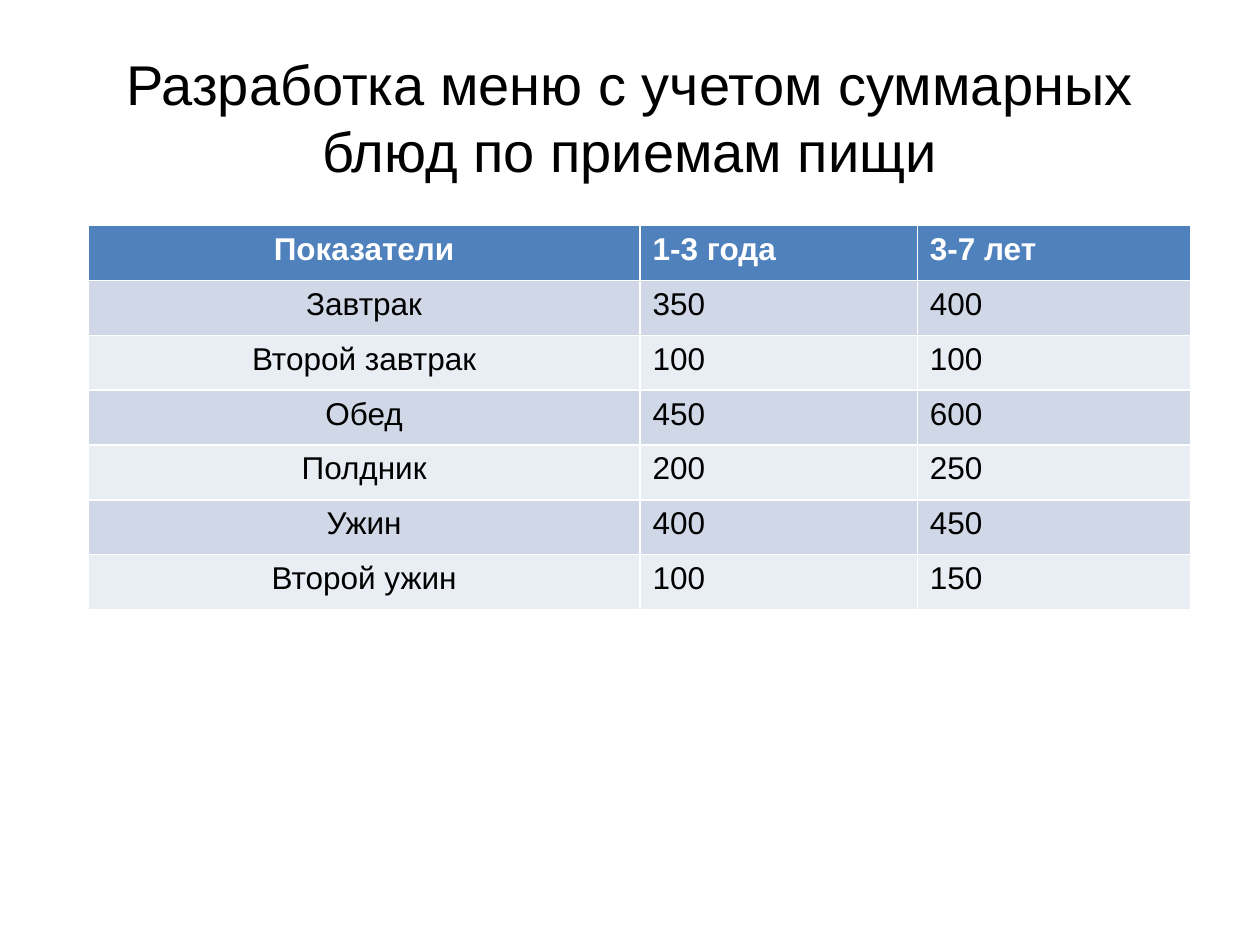
from pptx import Presentation
from pptx.dml.color import RGBColor
from pptx.enum.text import MSO_ANCHOR, PP_ALIGN
from pptx.util import Inches, Pt

CENTER, LEFT = PP_ALIGN.CENTER, PP_ALIGN.LEFT
MIDDLE = MSO_ANCHOR.MIDDLE
TITLE_ONLY = 5
FONT = "Arial"
BLACK, WHITE = "000000", "FFFFFF"
HEADER_FILL = "4F81BD"
BAND_FILLS = ("E9EDF4", "D0D8E8")
TITLE_BOX = (0.5, 0.3, 9, 1.25)
TABLE_BOX = (0.7, 1.79, 8.75, 3.05)
COLUMN_WIDTHS = (4.38, 2.2, 2.17)
TITLE = "Разработка меню с учетом суммарных блюд по приемам пищи"
MEALS = (
    ("Показатели", "1-3 года", "3-7 лет"),
    ("Завтрак", "350", "400"),
    ("Второй завтрак", "100", "100"),
    ("Обед", "450", "600"),
    ("Полдник", "200", "250"),
    ("Ужин", "400", "450"),
    ("Второй ужин", "100", "150"),
)


def color(value):
    """Turn a hex string into a colour."""
    return RGBColor.from_string(value)


def write(frame, text, size, ink, align, bold=False):
    """Put one formatted paragraph in a text frame."""
    frame.text = text
    para = frame.paragraphs[0]
    para.alignment = align
    font = para.runs[0].font
    font.name, font.size, font.bold = FONT, Pt(size), bold
    font.color.rgb = color(ink)


def place_title(page, box):
    """Move the title placeholder into the box and fill it."""
    title = page.shapes.title
    title.left, title.top, title.width, title.height = map(Inches, box)
    frame = title.text_frame
    frame.word_wrap = True
    frame.vertical_anchor = MIDDLE
    write(frame, TITLE, 32, BLACK, CENTER)


def place_meal_table(page, box):
    """Draw the table of portion sizes by meal and age in the box."""
    table = page.shapes.add_table(
        len(MEALS), len(COLUMN_WIDTHS), *map(Inches, box)
    ).table
    for column, width in zip(table.columns, COLUMN_WIDTHS):
        column.width = Inches(width)
    for row, values in enumerate(MEALS):
        header = row == 0
        for col, value in enumerate(values):
            cell = table.cell(row, col)
            cell.fill.solid()
            cell.fill.fore_color.rgb = color(
                HEADER_FILL if header else BAND_FILLS[row % 2]
            )
            write(
                cell.text_frame, value, 18,
                WHITE if header else BLACK,
                CENTER if col == 0 else LEFT,
                header,
            )


def main():
    """Build and save the deck."""
    deck = Presentation()
    deck.slide_width, deck.slide_height = Inches(10), Inches(7.5)
    page = deck.slides.add_slide(deck.slide_layouts[TITLE_ONLY])
    place_title(page, TITLE_BOX)
    place_meal_table(page, TABLE_BOX)
    deck.save("out.pptx")


if __name__ == "__main__":
    main()
